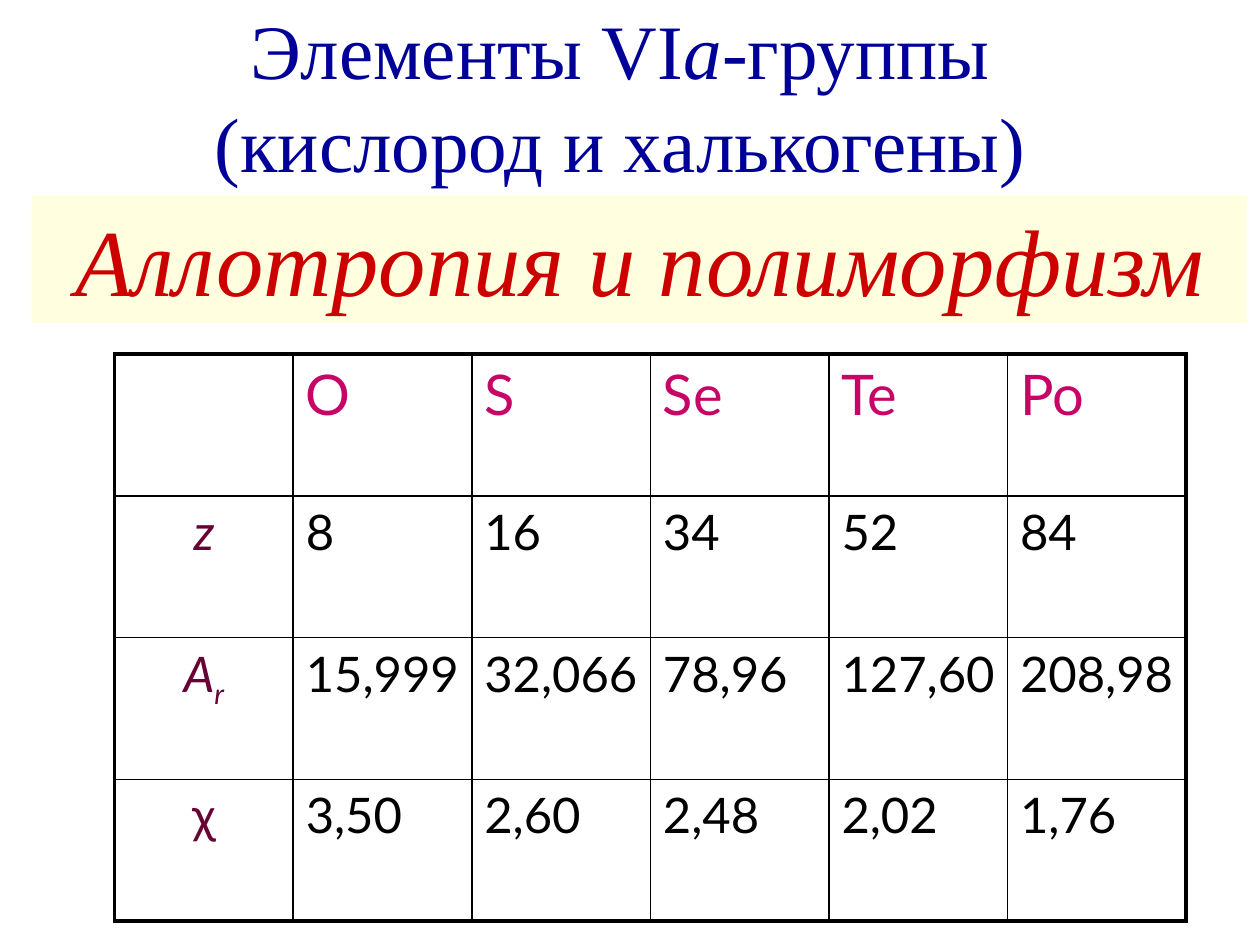
from dataclasses import dataclass

from lxml import etree
from pptx import Presentation
from pptx import util as u
from pptx.dml.color import RGBColor
from pptx.enum import shapes, text
from pptx.oxml.ns import qn

COLORS = {
    "title": "000099",
    "topic": "CC0000",
    "band": "FFFFCC",
    "element": "C70566",
    "quantity": "680235",
    "value": "000000",
    "border": "000000",
}
SERIF, SANS = "Times New Roman", "Lato"
OUTER, INNER = 2.25, 1


@dataclass(frozen=True)
class Style:
    size: float
    font: str
    color: str
    italic: bool = False
    baseline: int = 0


@dataclass(frozen=True)
class Piece:
    words: str
    style: Style


@dataclass(frozen=True)
class Entry:
    pieces: tuple[Piece, ...]
    centered: bool = False


TITLE = Style(44, SERIF, "title")
TITLE_ITALIC = Style(44, SERIF, "title", italic=True)
TOPIC = Style(54, SERIF, "topic", italic=True)
ELEMENT = Style(32, SANS, "element")
SYMBOL = Style(28, SANS, "quantity", italic=True)
SUBSCRIPT = Style(28, SANS, "quantity", italic=True, baseline=-25000)
GREEK = Style(28, SANS, "quantity")
VALUE = Style(28, SANS, "value")


def add_piece(paragraph, piece: Piece) -> None:
    run = paragraph.add_run()
    run.text = piece.words
    style = piece.style
    run.font.size = u.Pt(style.size)
    run.font.name = style.font
    run.font.italic = style.italic
    run.font.color.rgb = RGBColor.from_string(COLORS[style.color])
    if style.baseline:
        run.font._element.set("baseline", str(style.baseline))


def add_border(cell, side: str, points: float) -> None:
    line = etree.SubElement(cell._tc.get_or_add_tcPr(), qn(f"a:ln{side}"), w=str(u.Pt(points)))
    fill = etree.SubElement(line, qn("a:solidFill"))
    etree.SubElement(fill, qn("a:srgbClr"), val=COLORS["border"])


def quantity(label: tuple[Piece, ...], values: str) -> list[Entry]:
    return [Entry(label, centered=True)] + [Entry((Piece(v, VALUE),)) for v in values.split()]


def add_title(slide) -> None:
    title = slide.shapes.title
    title.left, title.top, title.width, title.height = u.Cm(0.3), u.Cm(0.33), u.Cm(24.8), u.Cm(3.18)
    frame = title.text_frame
    frame.auto_size = text.MSO_AUTO_SIZE.NONE
    frame.vertical_anchor = text.MSO_ANCHOR.MIDDLE
    heading = frame.paragraphs[0]
    heading.alignment = text.PP_ALIGN.CENTER
    add_piece(heading, Piece("Элементы VI", TITLE))
    add_piece(heading, Piece("а", TITLE_ITALIC))
    add_piece(heading, Piece("-группы ", TITLE))
    heading.add_line_break()
    add_piece(heading, Piece("(кислород и халькогены) ", TITLE))


def add_properties(slide, rows: list[list[Entry]]) -> None:
    row_count, column_count = len(rows), len(rows[0])
    properties = slide.shapes.add_table(
        row_count, column_count, u.Cm(2.31), u.Cm(7.14), u.Cm(21.6), u.Cm(11.43)
    ).table
    properties.first_row = properties.horz_banding = False
    for r, entries in enumerate(rows):
        for c, entry in enumerate(entries):
            cell = properties.cell(r, c)
            edges = {"L": c == 0, "R": c == column_count - 1, "T": r == 0, "B": r == row_count - 1}
            for side, is_outer in edges.items():
                add_border(cell, side, OUTER if is_outer else INNER)
            cell.fill.background()
            paragraph = cell.text_frame.paragraphs[0]
            paragraph.alignment = text.PP_ALIGN.CENTER if entry.centered else text.PP_ALIGN.LEFT
            for piece in entry.pieces:
                add_piece(paragraph, piece)


def add_topic(slide) -> None:
    band = slide.shapes.add_shape(
        shapes.MSO_SHAPE.RECTANGLE, u.Cm(0.64), u.Cm(3.94), u.Cm(24.5), u.Cm(2.57)
    )
    band.shadow.inherit = False
    band.line.fill.background()
    band.fill.solid()
    band.fill.fore_color.rgb = RGBColor.from_string(COLORS["band"])
    tint = band._element.spPr.find(qn("a:solidFill")).find(qn("a:srgbClr"))
    etree.SubElement(tint, qn("a:alpha"), val="61000")
    frame = band.text_frame
    frame.word_wrap = True
    frame.auto_size = text.MSO_AUTO_SIZE.SHAPE_TO_FIT_TEXT
    frame.vertical_anchor = text.MSO_ANCHOR.TOP
    topic = frame.paragraphs[0]
    topic.alignment = text.PP_ALIGN.CENTER
    add_piece(topic, Piece("Аллотропия и полиморфизм", TOPIC))


def main() -> None:
    deck = Presentation()
    deck.slide_width, deck.slide_height = u.Cm(25.4), u.Cm(19.05)
    slide = deck.slides.add_slide(deck.slide_layouts.get_by_name("Title Only"))
    add_title(slide)
    elements = [Entry(())] + [Entry((Piece(e, ELEMENT),)) for e in "O S Se Te Po".split()]
    add_properties(slide, [
        elements,
        quantity((Piece("z", SYMBOL),), "8 16 34 52 84"),
        quantity((Piece("A", SYMBOL), Piece("r", SUBSCRIPT)), "15,999 32,066 78,96 127,60 208,98"),
        quantity((Piece("χ", GREEK),), "3,50 2,60 2,48 2,02 1,76"),
    ])
    add_topic(slide)
    deck.save("out.pptx")


if __name__ == "__main__":
    main()
